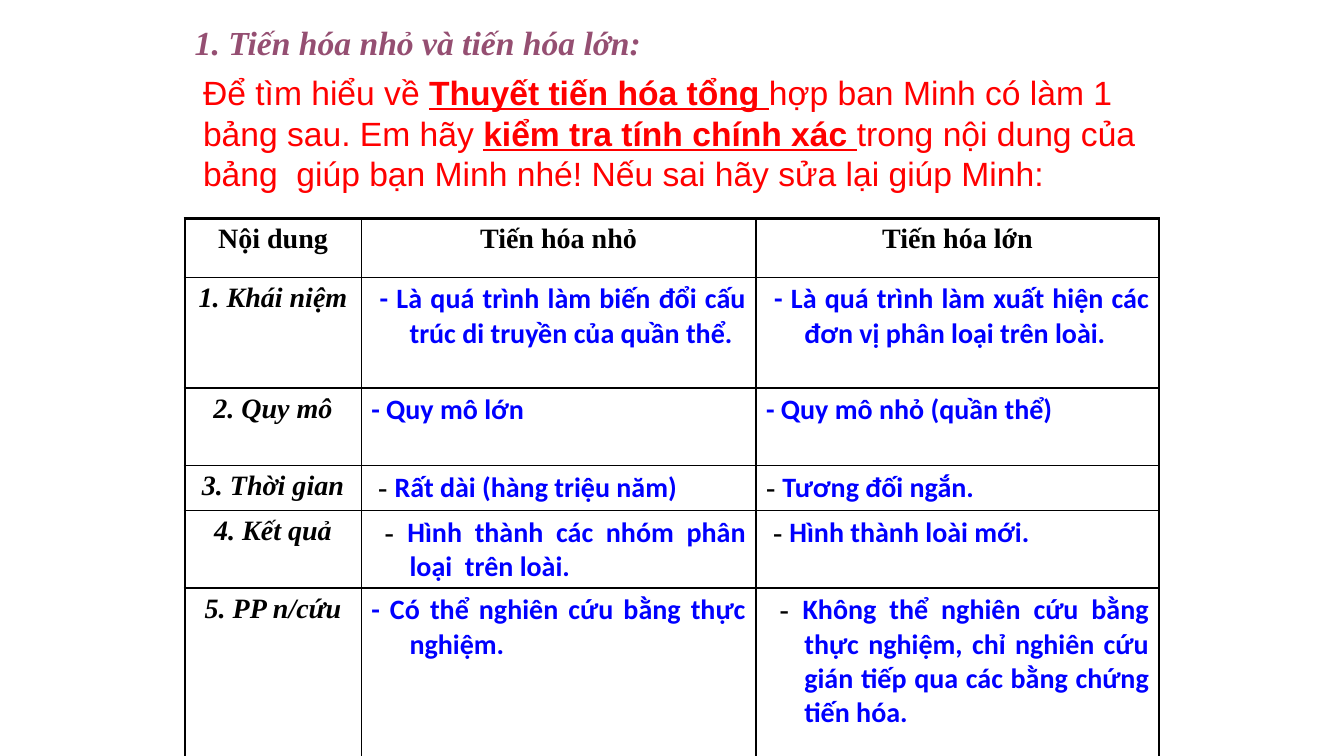
import pptx
import pptx.dml.color
import pptx.enum.text
import pptx.oxml
import pptx.oxml.ns
import pptx.util

COLORS = {"title": "954F72", "question": "FF0000", "label": "000000",
          "statement": "0000FF", "border": "000000"}
GRID_COLUMNS, GRID_ROWS = 160, 90
UNIT = pptx.util.Inches(13.33) / GRID_COLUMNS
COLUMN_SPANS = [21, 47, 48]
ROW_SPANS = [7, 13.2, 9.2, 5.4, 9.2, 21.2]
ALIGN = pptx.enum.text.PP_ALIGN

HEADINGS = ["Nội dung", "Tiến hóa nhỏ", "Tiến hóa lớn"]
# Each statement is a black dash, possibly empty, followed by blue text.
COMPARISON = [
    ("1. Khái niệm",
     ("", " - Là quá trình làm biến đổi cấu trúc di truyền của quần thể."),
     ("", " - Là quá trình làm xuất hiện các đơn vị phân loại trên loài.")),
    ("2. Quy mô", ("", "- Quy mô lớn"), ("", "- Quy mô nhỏ (quần thể)")),
    ("3. Thời gian", (" - ", "Rất dài (hàng triệu năm)"), ("- ", "Tương đối ngắn.")),
    ("4. Kết quả", (" - ", "Hình thành các nhóm phân loại  trên loài."),
     (" - ", "Hình thành loài mới.")),
    ("5. PP n/cứu", ("", "- Có thể nghiên cứu bằng thực nghiệm."),
     (" - ", "Không thể nghiên cứu bằng thực nghiệm, chỉ nghiên cứu gián tiếp "
             "qua các bằng chứng tiến hóa. ")),
]
QUESTION = [
    ("Để tìm hiểu về ", False),
    ("Thuyết tiến hóa tổng ", True),
    ("hợp ban Minh có làm 1 bảng sau. Em hãy ", False),
    ("kiểm tra tính chính xác ", True),
    ("trong nội dung của bảng  giúp bạn Minh nhé! Nếu sai hãy sửa lại giúp Minh:", False),
]


def grid(span):
    return pptx.util.Emu(round(span * UNIT))


def add_text(paragraph, text, *, size=20, font="Times New Roman", color="label",
             bold=True, italic=False, underline=False):
    run = paragraph.add_run()
    run.text = text
    run.font.size = pptx.util.Pt(size)
    run.font.name = font
    run.font.bold = bold
    run.font.italic = italic
    run.font.underline = underline
    run.font.color.rgb = pptx.dml.color.RGBColor.from_string(COLORS[color])


def add_text_box(slide, column, row, width, height):
    """Add a wrapping text box and return its first paragraph."""
    frame = slide.shapes.add_textbox(*map(grid, (column, row, width, height))).text_frame
    frame.word_wrap = True
    frame.auto_size = pptx.enum.text.MSO_AUTO_SIZE.SHAPE_TO_FIT_TEXT
    return frame.paragraphs[0]


def set_borders(cell, widths):
    """Draw the cell's edges; widths maps L, R, T and B to points."""
    properties = cell._tc.get_or_add_tcPr()
    for position, (side, width) in enumerate(widths.items()):
        properties.insert(position, pptx.oxml.parse_xml(
            f'<a:ln{side} {pptx.oxml.ns.nsdecls("a")} w="{pptx.util.Pt(width)}">'
            f'<a:solidFill><a:srgbClr val="{COLORS["border"]}"/></a:solidFill>'
            f'</a:ln{side}>'))


def start_cell(cell, alignment):
    """Clear the cell's fill and return its paragraph with a hanging indent."""
    cell.fill.background()
    paragraph = cell.text_frame.paragraphs[0]
    paragraph.alignment = alignment
    hanging = pptx.util.Inches(0.38)
    properties = paragraph._p.get_or_add_pPr()
    properties.set("marL", str(hanging))
    properties.set("indent", str(-hanging))
    return paragraph


def add_comparison_table(slide, column, row):
    last_row, last_column = len(ROW_SPANS) - 1, len(COLUMN_SPANS) - 1
    table = slide.shapes.add_table(
        len(ROW_SPANS), len(COLUMN_SPANS), grid(column), grid(row),
        grid(sum(COLUMN_SPANS)), grid(sum(ROW_SPANS))).table
    table.first_row = table.horz_banding = False
    for table_column, span in zip(table.columns, COLUMN_SPANS):
        table_column.width = grid(span)
    for table_row, span in zip(table.rows, ROW_SPANS):
        table_row.height = grid(span)

    for column_index, heading in enumerate(HEADINGS):
        add_text(start_cell(table.cell(0, column_index), ALIGN.CENTER), heading)
    for row_index, (label, *statements) in enumerate(COMPARISON, start=1):
        add_text(start_cell(table.cell(row_index, 0), ALIGN.CENTER), label, italic=True)
        for column_index, (dash, statement) in enumerate(statements, start=1):
            paragraph = start_cell(table.cell(row_index, column_index), ALIGN.JUSTIFY)
            if dash:
                add_text(paragraph, dash)
            add_text(paragraph, statement, font="Calibri", color="statement")

    for row_index in range(last_row + 1):
        for column_index in range(last_column + 1):
            set_borders(table.cell(row_index, column_index), {
                "L": 2 if column_index == 0 else 1,
                "R": 2 if column_index == last_column else 1,
                "T": 2 if row_index == 0 else 1,
                "B": 2 if row_index == last_row else 1})


def main():
    presentation = pptx.Presentation()
    presentation.slide_width = grid(GRID_COLUMNS)
    presentation.slide_height = grid(GRID_ROWS)
    slide = presentation.slides.add_slide(presentation.slide_layouts[6])

    title = add_text_box(slide, 22, 2, 59, 6.1)
    add_text(title, "1. Tiến hóa nhỏ và tiến hóa lớn:", size=24, color="title", italic=True)
    add_comparison_table(slide, 22, 26)
    question = add_text_box(slide, 23, 8, 114, 15.7)
    for text, stressed in QUESTION:
        add_text(question, text, size=24, font="Arial", color="question",
                 bold=stressed, underline=stressed)

    presentation.save("out.pptx")


if __name__ == "__main__":
    main()
